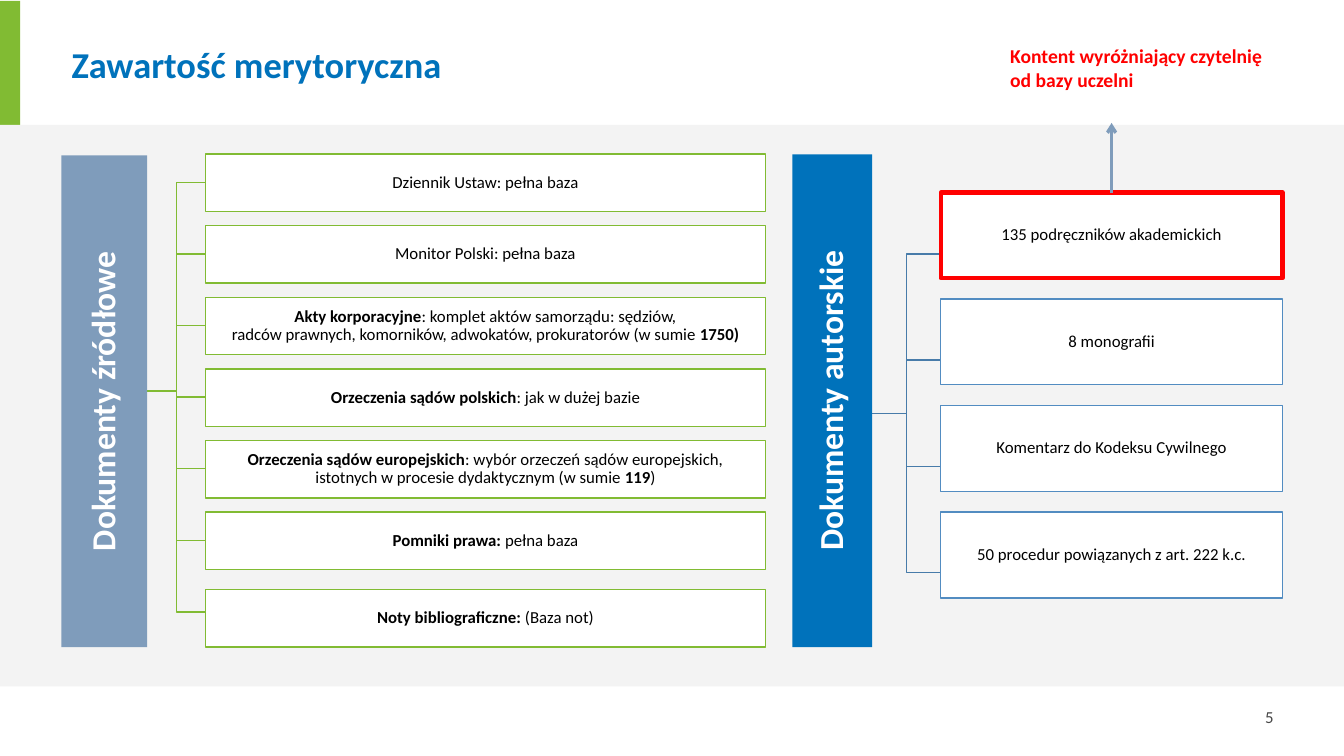
from lxml import etree
from pptx import Presentation
from pptx.dml.color import RGBColor
from pptx.enum.shapes import MSO_CONNECTOR, MSO_SHAPE
from pptx.enum.text import MSO_ANCHOR, PP_ALIGN
from pptx.oxml.ns import qn
from pptx.util import Inches, Pt

TITLE = "Zawartość merytoryczna"
CALLOUT = "Kontent wyróżniający czytelnię\nod bazy uczelni"
PAGE_NUMBER = "5"

# Each entry is a list of (text, bold) runs.
SOURCE_DOCUMENTS = [
    [("Dziennik Ustaw: pełna baza", False)],
    [("Monitor Polski: pełna baza", False)],
    [("Akty korporacyjne", True),
     (": komplet aktów samorządu: sędziów,\nradców prawnych, komorników, "
      "adwokatów, prokuratorów (w sumie ", False),
     ("1750)", True)],
    [("Orzeczenia sądów polskich", True), (": jak w dużej bazie", False)],
    [("Orzeczenia sądów europejskich", True),
     (": wybór orzeczeń sądów europejskich,\nistotnych w procesie "
      "dydaktycznym (w sumie ", False),
     ("119", True), (")", False)],
    [("Pomniki prawa: ", True), ("pełna baza", False)],
    [("Noty bibliograficzne:", True), (" (Baza not)", False)],
]
AUTHORED_DOCUMENTS = [
    [("135 podręczników akademickich", False)],
    [("8 monografii", False)],
    [("Komentarz do Kodeksu Cywilnego", False)],
    [("50 procedur powiązanych z art. 222 k.c.", False)],
]

GREEN, BLUE, STEEL, RED = "81BB33", "0072BB", "7F9CBB", "FF0000"
WHITE, BLACK, GREY = "FFFFFF", "000000", "474747"

# Lengths in inches; "tops" are box tops, "ends" the heights where branches end.
TREES = [
    dict(heading="Dokumenty autorskie", items=AUTHORED_DOCUMENTS,
         bar=(7.86, 1.53, 0.79, 4.89), bar_fill=BLUE, space_after=12,
         box=(9.33, 3.39, 0.85), tops=[1.91 + 1.057 * i for i in range(4)],
         trunk=4.1, ends=[2.52 + 1.053 * i for i in range(4)],
         branch_color="477BA9", border="528CC1"),
    dict(heading="Dokumenty źródłowe", items=SOURCE_DOCUMENTS,
         bar=(0.61, 1.54, 0.85, 4.88), bar_fill=STEEL, space_after=14,
         box=(2.04, 5.55, 0.57),
         tops=[1.53 + 0.71 * i for i in range(6)] + [5.85],
         trunk=3.88, ends=[1.81 + 0.71 * i for i in range(7)],
         branch_color=GREEN, border=GREEN),
]


def rgb(hex_color):
    return RGBColor.from_string(hex_color)


def add_runs(paragraph, runs, size, color):
    """Add (text, bold) runs; a newline in a text becomes a line break."""
    for text, bold in runs:
        for number, line in enumerate(text.split("\n")):
            if number:
                paragraph.add_line_break()
            run = paragraph.add_run()
            run.text = line
            run.font.name = "Calibri"
            run.font.size = Pt(size)
            run.font.bold = bold
            run.font.color.rgb = rgb(color)


def add_rectangle(slide, left, top, width, height, fill, border=None, weight=1):
    rectangle = slide.shapes.add_shape(
        MSO_SHAPE.RECTANGLE, Inches(left), Inches(top), Inches(width), Inches(height))
    rectangle.shadow.inherit = False
    rectangle.fill.solid()
    rectangle.fill.fore_color.rgb = rgb(fill)
    if border:
        rectangle.line.color.rgb = rgb(border)
        rectangle.line.width = Pt(weight)
    else:
        rectangle.line.fill.background()
    return rectangle


def write_centered(rectangle, runs, size, color, inset, space_after):
    frame = rectangle.text_frame
    frame.word_wrap = True
    frame.vertical_anchor = MSO_ANCHOR.MIDDLE
    frame.margin_left = frame.margin_right = Inches(inset)
    frame.margin_top = frame.margin_bottom = Inches(inset)
    paragraph = frame.paragraphs[0]
    paragraph.alignment = PP_ALIGN.CENTER
    paragraph.line_spacing = 0.9
    paragraph.space_after = Pt(space_after)
    add_runs(paragraph, runs, size, color)


def add_branch(slide, start_x, start_y, end_x, end_y, color):
    middle_x = (start_x + end_x) / 2
    builder = slide.shapes.build_freeform(Inches(start_x), Inches(start_y))
    builder.add_line_segments(
        [(Inches(x), Inches(y))
         for x, y in ((middle_x, start_y), (middle_x, end_y), (end_x, end_y))],
        close=False)
    branch = builder.convert_to_shape()
    branch.shadow.inherit = False
    branch.fill.background()
    branch.line.color.rgb = rgb(color)
    branch.line.width = Pt(1)


def add_tree(slide, tree):
    """Draw branches, the upright heading and the boxes; return the boxes."""
    bar_left, bar_top, bar_width, bar_height = tree["bar"]
    box_left, box_width, box_height = tree["box"]
    for end in tree["ends"]:
        add_branch(slide, bar_left + bar_width, tree["trunk"], box_left, end,
                   tree["branch_color"])
    shift = (bar_height - bar_width) / 2
    heading = add_rectangle(slide, bar_left - shift, bar_top + shift,
                            bar_height, bar_width, tree["bar_fill"])
    heading.rotation = 270
    write_centered(heading, [(tree["heading"], True)], 24, WHITE, 0.02,
                   tree["space_after"])
    boxes = []
    for runs, top in zip(tree["items"], tree["tops"]):
        box = add_rectangle(slide, box_left, top, box_width, box_height,
                            WHITE, tree["border"])
        write_centered(box, runs, 12, BLACK, 0.01, 6)
        boxes.append(box)
    return boxes


def add_label(slide, left, top, width, height, runs, size, color):
    label = slide.shapes.add_textbox(
        Inches(left), Inches(top), Inches(width), Inches(height))
    label.text_frame.word_wrap = True
    add_runs(label.text_frame.paragraphs[0], runs, size, color)
    return label.text_frame


def add_arrow_up(slide, box, end_y):
    center = box.left + box.width // 2
    arrow = slide.shapes.add_connector(
        MSO_CONNECTOR.STRAIGHT, center, box.top, center, Inches(end_y))
    arrow.begin_connect(box, 0)
    arrow.line.color.rgb = rgb(STEEL)
    arrow.line.width = Pt(2.25)
    etree.SubElement(arrow.line._get_or_add_ln(), qn("a:tailEnd"), type="arrow")
    etree.SubElement(arrow._element.spPr, qn("a:effectLst"))


def main():
    presentation = Presentation()
    presentation.slide_width = Inches(13.33)
    presentation.slide_height = Inches(7.5)
    slide = presentation.slides.add_slide(presentation.slide_layouts[5])

    title = slide.shapes.title
    title.left, title.top = Inches(0.61), Inches(0.42)
    title.width, title.height = Inches(12.72), Inches(0.65)
    title.text_frame.vertical_anchor = MSO_ANCHOR.TOP
    title_line = title.text_frame.paragraphs[0]
    title_line.alignment = PP_ALIGN.LEFT
    title_line.line_spacing = 0.9
    add_runs(title_line, [(TITLE, True)], 26, BLUE)

    add_rectangle(slide, 0, 0.01, 0.2, 1.25, GREEN)
    add_rectangle(slide, 0, 1.24, 13.33, 5.57, "F3F3F3")

    authored_boxes, _ = [add_tree(slide, tree) for tree in TREES]
    textbooks = authored_boxes[0]
    textbooks.line.color.rgb = rgb(RED)
    textbooks.line.width = Pt(3)
    add_arrow_up(slide, textbooks, 1.22)

    page = add_label(slide, 11.86, 6.91, 0.87, 0.4, [(PAGE_NUMBER, False)], 12, GREY)
    page.vertical_anchor = MSO_ANCHOR.MIDDLE
    page.paragraphs[0].alignment = PP_ALIGN.RIGHT
    add_label(slide, 9.92, 0.39, 3.09, 0.57, [(CALLOUT, True)], 14, RED)

    presentation.save("out.pptx")


if __name__ == "__main__":
    main()
